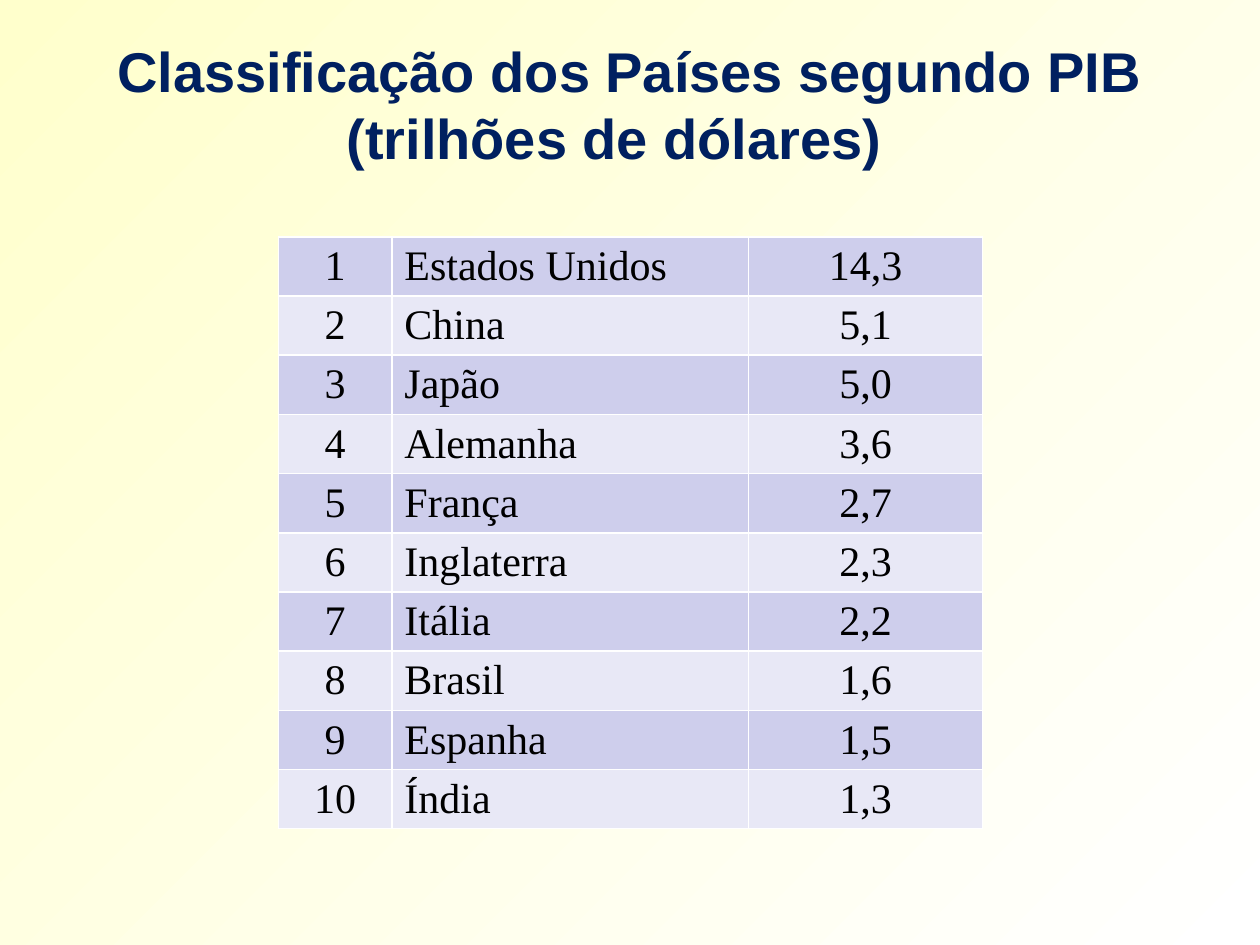
import pptx
import pptx.util
import pptx.dml.color
import pptx.enum.text
import pptx.oxml
import pptx.oxml.ns

Inches = pptx.util.Inches
Align = pptx.enum.text.PP_ALIGN

COLORS = {
    "cream": "FFFFCC",
    "white": "FFFFFF",
    "navy": "002060",
    "black": "000000",
    "dark band": "CECEEC",
    "light band": "E8E8F6",
}
TITLE = ["Classificação dos Países segundo PIB", "(trilhões de dólares)  "]
RANKING = [
    ("Estados Unidos", "14,3"),
    ("China", "5,1"),
    ("Japão", "5,0"),
    ("Alemanha", "3,6"),
    ("França", "2,7"),
    ("Inglaterra", "2,3"),
    ("Itália", "2,2"),
    ("Brasil", "1,6"),
    ("Espanha", "1,5"),
    ("Índia", "1,3"),
]
WIDTHS = [0.9, 2.83, 1.86]
ALIGNS = [Align.CENTER, Align.LEFT, Align.CENTER]
ROW = 0.47


def color(name):
    return pptx.dml.color.RGBColor.from_string(COLORS[name])


def style(para, face, size, name, align, bold=False):
    para.alignment = align
    font = para.font
    font.name = face
    font.size = pptx.util.Pt(size)
    font.bold = bold
    font.color.rgb = color(name)


def paint_back(slide):
    """Fill the background from top left to bottom right."""
    fill = slide.background.fill
    fill.gradient()
    fill.gradient_angle = 315
    for stop, name in zip(fill.gradient_stops, ["cream", "white"]):
        stop.color.rgb = color(name)


def add_title(slide):
    box = slide.shapes.add_textbox(
        Inches(0.5), Inches(0.2), Inches(9), Inches(1.25))
    frame = box.text_frame
    frame.word_wrap = True
    frame.vertical_anchor = pptx.enum.text.MSO_ANCHOR.MIDDLE
    frame.text = "\n".join(TITLE)
    for para in frame.paragraphs:
        style(para, "Arial", 32, "navy", Align.CENTER, bold=True)


def add_edges(cell):
    """Draw a 1 pt white line on each side of the cell."""
    props = cell._tc.get_or_add_tcPr()
    for side in ["lnL", "lnR", "lnT", "lnB"]:
        props.append(pptx.oxml.parse_xml(
            f'<a:{side} {pptx.oxml.ns.nsdecls("a")} w="12700"><a:solidFill>'
            f'<a:srgbClr val="{COLORS["white"]}"/></a:solidFill></a:{side}>'))


def fill_cell(cell, text, align, band):
    add_edges(cell)
    cell.fill.solid()
    cell.fill.fore_color.rgb = color(band)
    cell.text = text
    style(cell.text_frame.paragraphs[0], "Times New Roman", 24, "black", align)


def add_ranking(slide):
    count = len(RANKING)
    table = slide.shapes.add_table(
        count, len(WIDTHS), Inches(2.21), Inches(1.88),
        Inches(sum(WIDTHS)), Inches(ROW * count)).table
    table.first_row = False
    for column, width in zip(table.columns, WIDTHS):
        column.width = Inches(width)
    for index, (land, value) in enumerate(RANKING):
        table.rows[index].height = Inches(ROW)
        band = "light band" if index % 2 else "dark band"
        texts = [str(index + 1), land, value]
        for cell, text, align in zip(table.rows[index].cells, texts, ALIGNS):
            fill_cell(cell, text, align, band)


def main():
    deck = pptx.Presentation()
    deck.slide_width = Inches(10)
    deck.slide_height = Inches(7.5)
    slide = deck.slides.add_slide(deck.slide_layouts[6])
    paint_back(slide)
    add_ranking(slide)
    add_title(slide)
    deck.save("out.pptx")


if __name__ == "__main__":
    main()
